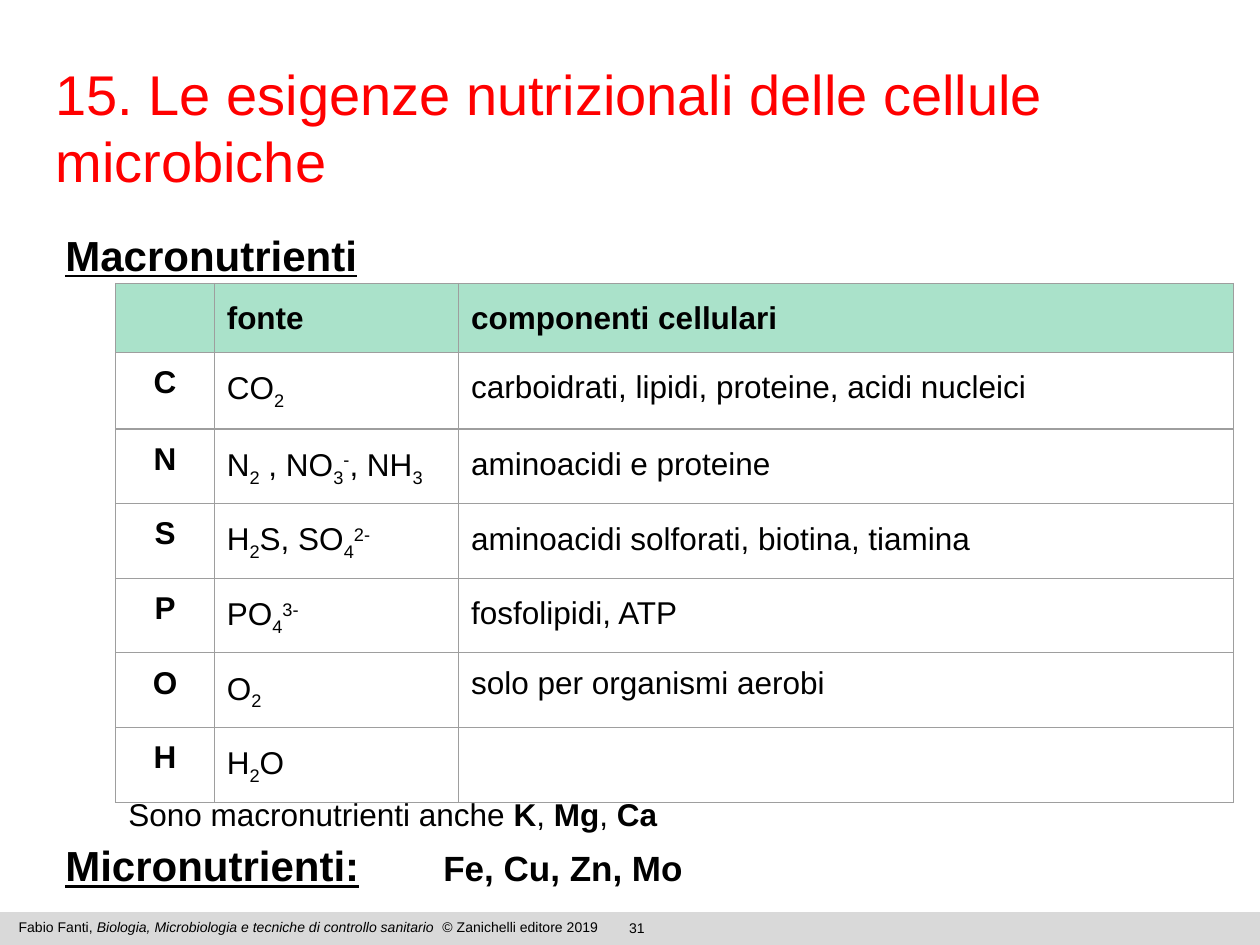
from lxml.etree import SubElement
from pptx import Presentation
from pptx.dml.color import RGBColor
from pptx.enum.shapes import MSO_SHAPE
from pptx.enum.text import MSO_ANCHOR, PP_ALIGN
from pptx.oxml.ns import qn
from pptx.util import Inches, Pt

BLACK = RGBColor(0, 0, 0)
WHITE = RGBColor(255, 255, 255)
RED = RGBColor(255, 0, 0)
FOOTER_GREY = RGBColor(0xD9, 0xD9, 0xD9)
HEADER_GREEN = RGBColor(0xAA, 0xE2, 0xCA)
BORDER_GREY = RGBColor(0x9E, 0x9E, 0x9E)

COLUMN_WIDTHS = [0.78, 1.94, 6.15]
ROW_HEIGHTS = [0.52, 0.61] + [0.57] * 5
# In formulas, "_" lowers and "^" raises the piece that follows; "|" splits pieces.
NUTRIENTS = [
    ("C", "CO|_2", "carboidrati, lipidi, proteine, acidi nucleici"),
    ("N", "N|_2| , NO|_3|^-|, NH|_3", "aminoacidi e proteine"),
    ("S", "H|_2|S, SO|_4|^2-", "aminoacidi solforati, biotina, tiamina"),
    ("P", "PO|_4|^3-", "fosfolipidi, ATP"),
    ("O", "O|_2", "solo per organismi aerobi"),
    ("H", "H|_2|O", ""),
]
BASELINES = {"_": "-25000", "^": "30000"}


def add_span(para, text, size=18, color=BLACK, bold=False, italic=False,
             underline=False, baseline=None):
    span = para.add_run()
    span.text = text
    font = span.font
    font.name, font.size, font.color.rgb = "Arial", Pt(size), color
    font.bold, font.italic, font.underline = bold, italic, underline
    if baseline:
        font._element.set("baseline", baseline)


def add_formula(para, formula):
    for piece in formula.split("|"):
        baseline = BASELINES.get(piece[0])
        add_span(para, piece[1:] if baseline else piece, baseline=baseline)


def set_margins(frame, side, edge):
    frame.margin_left = frame.margin_right = Inches(side)
    frame.margin_top = frame.margin_bottom = Inches(edge)


def add_box(page, left, top, width, height, edge=0.05):
    box = page.shapes.add_textbox(*map(Inches, (left, top, width, height)))
    frame = box.text_frame
    frame.word_wrap = True
    set_margins(frame, 0.1, edge)
    return frame


def add_panel(page, left, top, width, height, color):
    panel = page.shapes.add_shape(
        MSO_SHAPE.RECTANGLE, *map(Inches, (left, top, width, height)))
    panel.shadow.inherit = False
    panel.fill.solid()
    panel.fill.fore_color.rgb = color
    panel.line.fill.background()
    return panel


def add_footer(page):
    add_panel(page, 0, 7.24, 10, 0.26, FOOTER_GREY)
    number = add_box(page, 3.94, 7.25, 2.23, 0.17).paragraphs[0]
    number.alignment = PP_ALIGN.CENTER
    add_span(number, "31", size=8)
    credit = add_box(page, 0.05, 7.24, 5.04, 0.24).paragraphs[0]
    add_span(credit, "Fabio Fanti, ", size=8)
    add_span(credit, "Biologia, Microbiologia e tecniche di controllo sanitario",
             size=8, italic=True)
    add_span(credit, "  © Zanichelli editore 2019", size=8)


def add_title(page):
    title = add_panel(page, 0.35, 0.42, 9.65, 0.97, WHITE)
    title.line.color.rgb = WHITE
    title.line.width = Pt(0.75)
    frame = title.text_frame
    frame.word_wrap = True
    frame.vertical_anchor = MSO_ANCHOR.TOP
    set_margins(frame, 0.09, 0.05)
    para = frame.paragraphs[0]
    para.alignment = PP_ALIGN.LEFT
    add_span(para, "15. Le esigenze nutrizionali delle cellule microbiche",
             size=32, color=RED)


def add_body(page):
    frame = add_box(page, 0.42, 1.66, 9.51, 5.51, edge=0.1)
    heading, others, micro = (
        frame.paragraphs[0], frame.add_paragraph(), frame.add_paragraph())
    for para in (heading, others, micro):
        para.line_spacing = 1.15
    add_span(heading, "Macronutrienti", size=24, bold=True, underline=True)

    others.space_before = Pt(291)  # room for the table
    properties = others._p.get_or_add_pPr()
    properties.set("marL", "0")
    properties.set("indent", str(Inches(0.5)))
    add_span(others, "Sono macronutrienti anche ")
    for index, element in enumerate(("K", "Mg", "Ca")):
        if index:
            add_span(others, ", ")
        add_span(others, element, bold=True)

    tabs = SubElement(micro._p.get_or_add_pPr(), qn("a:tabLst"))
    SubElement(tabs, qn("a:tab"), pos=str(Inches(3)), algn="l")
    add_span(micro, "Micronutrienti:\t", size=24, bold=True, underline=True)
    add_span(micro, "Fe, Cu, Zn, Mo", size=20, bold=True)


def set_borders(cell):
    properties = cell._tc.get_or_add_tcPr()
    for position, side in enumerate(("lnL", "lnR", "lnT", "lnB")):
        line = properties.makeelement(qn(f"a:{side}"), {"w": str(Pt(0.75))})
        fill = SubElement(line, qn("a:solidFill"))
        SubElement(fill, qn("a:srgbClr"), val=str(BORDER_GREY))
        properties.insert(position, line)


def style_cell(cell, is_header):
    set_margins(cell, 0.1, 0.1)
    if is_header:
        cell.fill.solid()
        cell.fill.fore_color.rgb = HEADER_GREEN
    else:
        cell.fill.background()
    set_borders(cell)


def add_nutrient_table(page):
    table = page.shapes.add_table(
        len(ROW_HEIGHTS), len(COLUMN_WIDTHS), Inches(0.92), Inches(2.25),
        Inches(sum(COLUMN_WIDTHS)), Inches(sum(ROW_HEIGHTS))).table
    table.horz_banding = False
    for column, width in zip(table.columns, COLUMN_WIDTHS):
        column.width = Inches(width)
    for row, height in zip(table.rows, ROW_HEIGHTS):
        row.height = Inches(height)

    rows = [("", "fonte", "componenti cellulari")] + NUTRIENTS
    for row_index, texts in enumerate(rows):
        is_header = row_index == 0
        for column_index, text in enumerate(texts):
            cell = table.cell(row_index, column_index)
            style_cell(cell, is_header)
            para = cell.text_frame.paragraphs[0]
            is_symbol = column_index == 0
            if is_symbol:
                para.alignment = PP_ALIGN.CENTER
            elif not text.startswith("solo"):
                para.line_spacing = 1.15
            if is_header or is_symbol:
                if text:
                    add_span(para, text, bold=True)
            elif text:
                add_formula(para, text)


def main():
    deck = Presentation()
    deck.slide_width, deck.slide_height = Inches(10), Inches(7.5)
    page = deck.slides.add_slide(deck.slide_layouts[6])
    add_footer(page)
    add_title(page)
    add_body(page)
    add_nutrient_table(page)
    deck.save("out.pptx")


if __name__ == "__main__":
    main()
